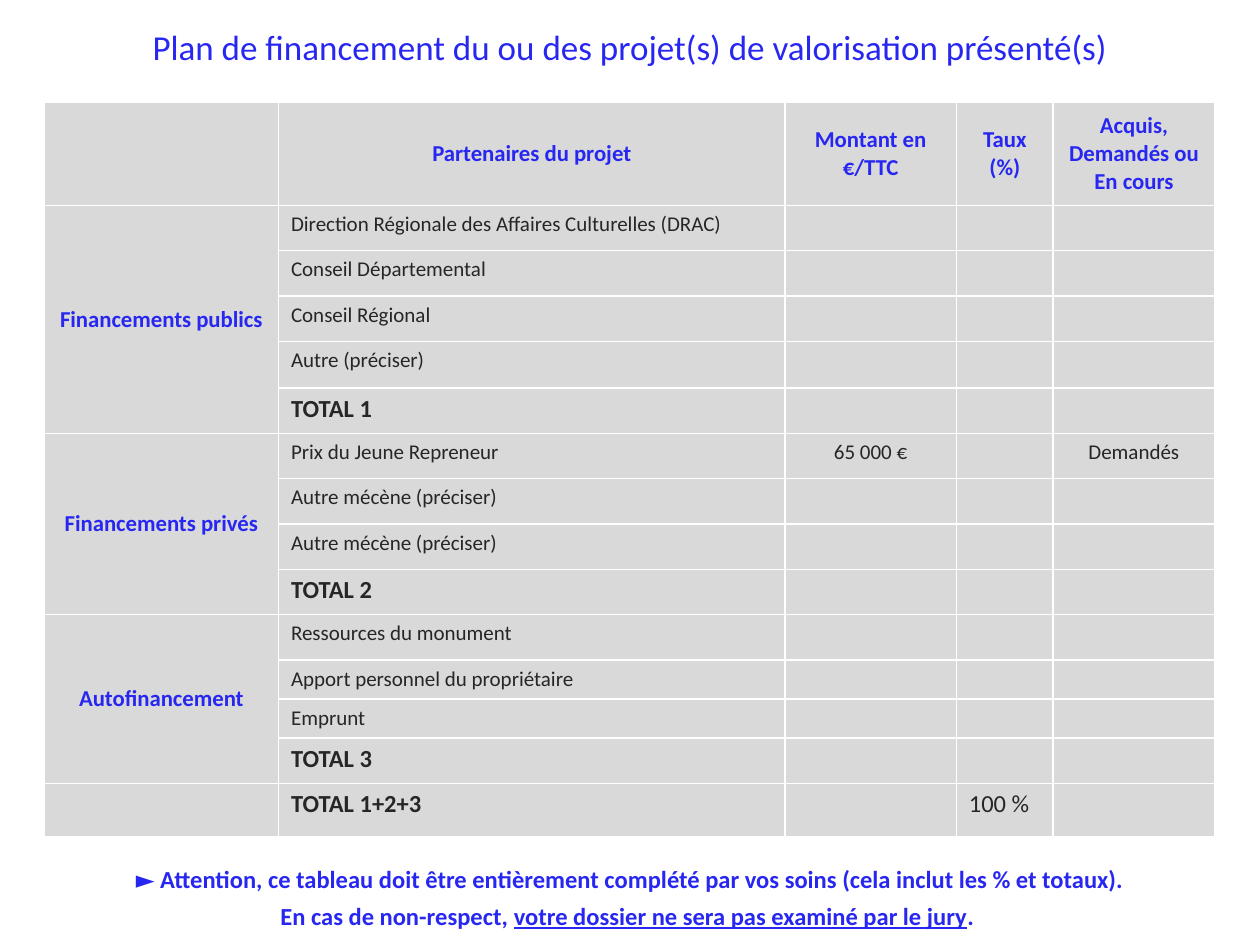
from dataclasses import dataclass

from lxml.etree import SubElement
from pptx import Presentation
from pptx.dml.color import RGBColor
from pptx.enum.text import MSO_ANCHOR, MSO_AUTO_SIZE, PP_ALIGN
from pptx.oxml import parse_xml
from pptx.oxml.ns import nsdecls, qn
from pptx.util import Inches, Pt

BLUE, DARK, GREY, WHITE = "2727F1", "262626", "D9D9D9", "FFFFFF"
COLS = [1.86, 4.02, 1.36, 0.77, 1.28]
ROW_H = 0.36
SPECIAL_ROWS = {0: 0.82, 4: 0.37, 11: 0.31, 12: 0.31, 14: 0.42}
HEADERS = ["", "Partenaires du projet", "Montant en €/TTC", "Taux (%)",
           "Acquis, Demandés ou En cours"]


@dataclass
class Style:
    size: int
    color: str
    bold: bool = False
    align: PP_ALIGN = PP_ALIGN.LEFT
    anchor: MSO_ANCHOR = MSO_ANCHOR.TOP


@dataclass
class Section:
    name: str
    partners: list[str]
    total: str


HEAD = Style(13, BLUE, True, PP_ALIGN.CENTER, MSO_ANCHOR.MIDDLE)
ITEM = Style(12, DARK)
VALUE = Style(12, DARK, align=PP_ALIGN.CENTER)
TOTAL = Style(14, DARK, True)
RATE = Style(14, DARK)
NOTE = Style(14, BLUE, True, PP_ALIGN.CENTER)
TITLE = Style(20, BLUE, align=PP_ALIGN.CENTER, anchor=MSO_ANCHOR.MIDDLE)

SECTIONS = [
    Section("Financements publics",
            ["Direction Régionale des Affaires Culturelles (DRAC)",
             "Conseil Départemental", "Conseil Régional", "Autre (préciser)"],
            "TOTAL 1"),
    Section("Financements privés",
            ["Prix du Jeune Repreneur", "Autre mécène (préciser)",
             "Autre mécène (préciser)"], "TOTAL 2"),
    Section("Autofinancement",
            ["Ressources du monument", "Apport personnel du propriétaire",
             "Emprunt"], "TOTAL 3"),
]


def rgb(color: str) -> RGBColor:
    return RGBColor.from_string(color)


def add_run(p, text: str, style: Style, underline: bool = False) -> None:
    p.alignment = style.align
    r = p.add_run()
    r.text = text
    r.font.name = "Calibri"
    r.font.size = Pt(style.size)
    r.font.bold = style.bold
    r.font.underline = underline
    r.font.color.rgb = rgb(style.color)


def write(cell, text: str, style: Style) -> None:
    cell.vertical_anchor = style.anchor
    add_run(cell.text_frame.paragraphs[0], text, style)


def format_cell(cell) -> None:
    """Grey fill, thin white borders, small text size while empty."""
    cell.fill.solid()
    cell.fill.fore_color.rgb = rgb(GREY)
    tc_pr = cell._tc.get_or_add_tcPr()
    for i, side in enumerate("LRTB"):
        tc_pr.insert(i, parse_xml(
            f'<a:ln{side} {nsdecls("a")} w="12700"><a:solidFill>'
            f'<a:srgbClr val="{WHITE}"/></a:solidFill></a:ln{side}>'))
    p = cell.text_frame.paragraphs[0]
    if not p.runs:
        SubElement(p._p, qn("a:endParaRPr")).set("sz", "1200")


def add_funding_table(s) -> None:
    n_rows = 2 + sum(len(sec.partners) + 1 for sec in SECTIONS)
    heights = [SPECIAL_ROWS.get(i, ROW_H) for i in range(n_rows)]
    table = s.shapes.add_table(n_rows, len(COLS), Inches(0.35), Inches(0.81),
                               Inches(sum(COLS)), Inches(sum(heights))).table
    for col, width in zip(table.columns, COLS):
        col.width = Inches(width)
    for row, height in zip(table.rows, heights):
        row.height = Inches(height)

    for c, text in enumerate(HEADERS):
        if text:
            write(table.cell(0, c), text, HEAD)

    # One merged heading per section, then its partners and total
    top = 1
    for sec in SECTIONS:
        last = top + len(sec.partners)
        table.cell(top, 0).merge(table.cell(last, 0))
        write(table.cell(top, 0), sec.name, HEAD)
        for r, partner in enumerate(sec.partners, top):
            write(table.cell(r, 1), partner, ITEM)
        write(table.cell(last, 1), sec.total, TOTAL)
        top = last + 1

    # Values already known, and the grand total
    write(table.cell(6, 2), "65 000 €", VALUE)
    write(table.cell(6, 4), "Demandés", VALUE)
    write(table.cell(top, 1), "TOTAL 1+2+3", TOTAL)
    write(table.cell(top, 3), "100 %", RATE)

    for cell in table.iter_cells():
        format_cell(cell)


def add_title(s, text: str) -> None:
    sp = s.shapes.title
    sp.left, sp.top = Inches(0), Inches(-0.06)
    sp.width, sp.height = Inches(10), Inches(0.86)
    sp.text_frame.vertical_anchor = TITLE.anchor
    add_run(sp.text_frame.paragraphs[0], text, TITLE)


def add_warning(s) -> None:
    sp = s.shapes.add_textbox(Inches(0.7), Inches(6.81), Inches(8.6), Inches(0.64))
    tf = sp.text_frame
    tf.word_wrap = True
    tf.auto_size = MSO_AUTO_SIZE.SHAPE_TO_FIT_TEXT
    add_run(tf.paragraphs[0], "► Attention, ce tableau doit être entièrement "
            "complété par vos soins (cela inclut les % et totaux).", NOTE)
    p = tf.add_paragraph()
    p.space_before = Pt(4.2)
    add_run(p, "En cas de non-respect, ", NOTE)
    add_run(p, "votre dossier ne sera pas examiné par le jury", NOTE, underline=True)
    add_run(p, ". ", NOTE)


def main() -> None:
    prs = Presentation()
    prs.slide_width, prs.slide_height = Inches(10), Inches(7.5)
    s = prs.slides.add_slide(prs.slide_layouts[5])
    add_title(s, "Plan de financement du ou des projet(s) de valorisation présenté(s)")
    add_funding_table(s)
    add_warning(s)
    prs.save("out.pptx")


if __name__ == "__main__":
    main()
